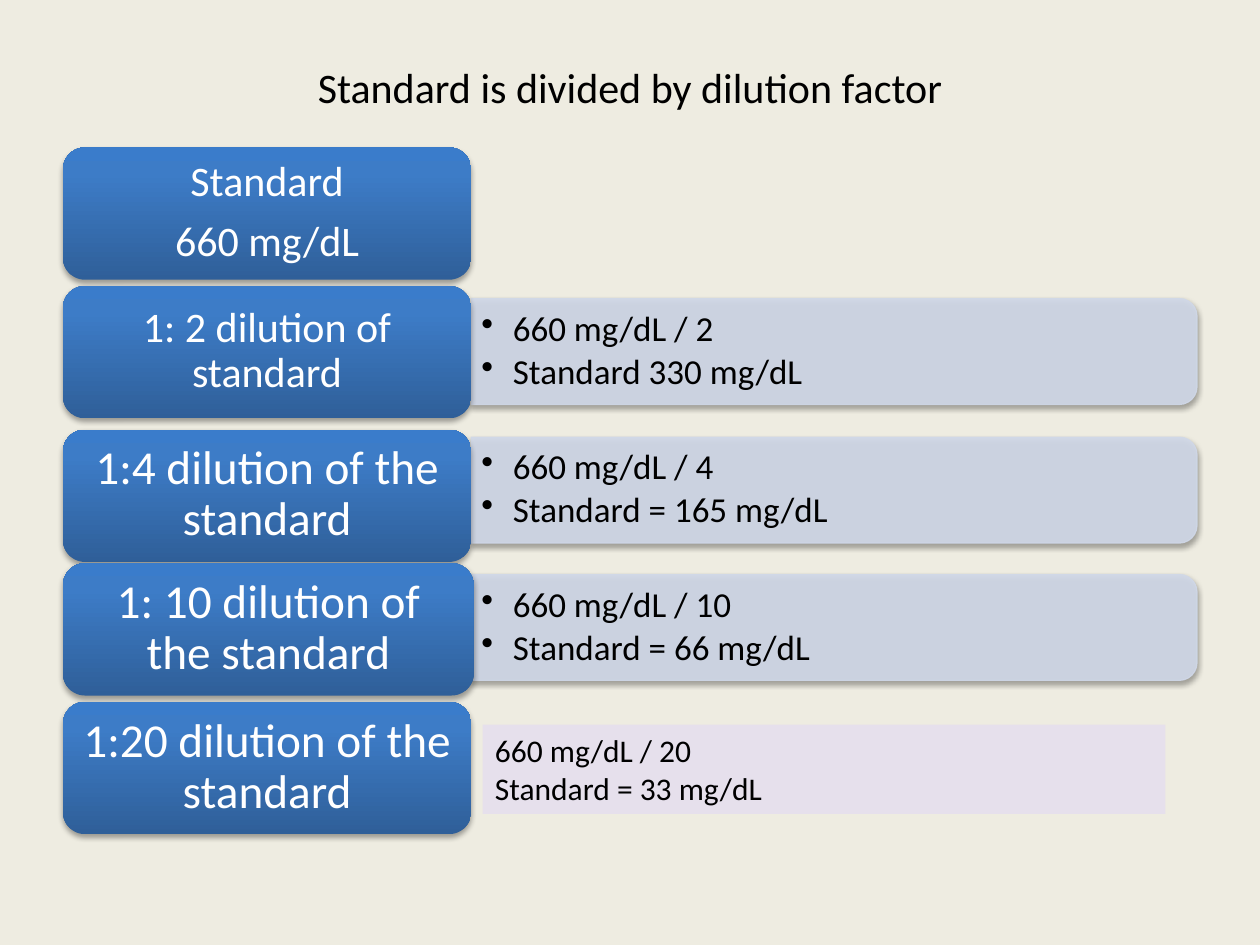
from dataclasses import dataclass

import lxml.etree
import pptx
import pptx.dml.color
import pptx.enum.shapes
import pptx.enum.text
import pptx.oxml
import pptx.oxml.ns
import pptx.util

Inches = pptx.util.Inches
Pt = pptx.util.Pt
qn = pptx.oxml.ns.qn
SHAPES = pptx.enum.shapes.MSO_SHAPE
ALIGN = pptx.enum.text.PP_ALIGN
MIDDLE = pptx.enum.text.MSO_ANCHOR.MIDDLE

COLORS = {
    "background": "EEECE1",
    "text": "000000",
    "label_text": "FFFFFF",
    "label_dark": "2F5F99",
    "label_mid": "3D7CC7",
    "label_light": "3A7CCB",
    "bar": "D0D8E8",
    "note": "E6E0EC",
    "shadow": "000000",
}
LABEL_GRADIENT = [(0, "label_dark"), (80, "label_mid"), (100, "label_light")]
LABEL_LEFT, LABEL_HEIGHT, LABEL_PADDING = 0.5, 1.05, 0.05
BAR_LEFT, BAR_LENGTH, BAR_THICKNESS = 3.74, 5.76, 0.84


@dataclass
class Label:
    top: float
    lines: list[str]
    size: int = 27
    width: float = 3.24


@dataclass
class Bar:
    middle: float
    lines: list[str]


LABELS = [
    Label(1.17, ["Standard", "660 mg/dL"], size=24),
    Label(2.27, ["1: 2 dilution of standard"], size=24),
    Label(3.41, ["1:4 dilution of the standard"]),
    Label(4.47, ["1: 10 dilution of the standard"], width=3.26),
    Label(5.57, ["1:20 dilution of the standard"]),
]
BARS = [
    Bar(2.79, ["660 mg/dL / 2", "Standard 330 mg/dL"]),
    Bar(3.89, ["660 mg/dL / 4", "Standard = 165 mg/dL"]),
    Bar(4.98, ["660 mg/dL / 10", "Standard = 66 mg/dL"]),
]


def color(name: str) -> pptx.dml.color.RGBColor:
    return pptx.dml.color.RGBColor.from_string(COLORS[name])


def apply_format(target, values: dict) -> None:
    for name, value in values.items():
        setattr(target, name, value)


def write_lines(frame, lines: list[str], size: int, color_name: str, paragraph_format: dict) -> None:
    for index, line in enumerate(lines):
        paragraph = frame.paragraphs[0] if index == 0 else frame.add_paragraph()
        apply_format(paragraph, paragraph_format)
        run = paragraph.add_run()
        run.text = line
        apply_format(run.font, {"name": "Calibri", "size": Pt(size)})
        run.font.color.rgb = color(color_name)


def add_text(slide, box: tuple, horizontal_inset: float, vertical_inset: float):
    frame = slide.shapes.add_textbox(*map(Inches, box)).text_frame
    apply_format(frame, {
        "word_wrap": True,
        "vertical_anchor": MIDDLE,
        "margin_left": Inches(horizontal_inset),
        "margin_right": Inches(horizontal_inset),
        "margin_top": Inches(vertical_inset),
        "margin_bottom": Inches(vertical_inset),
    })
    return frame


def add_color_element(parent, name: str, alpha: int = 100) -> None:
    element = lxml.etree.SubElement(parent, qn("a:srgbClr"), val=COLORS[name])
    if alpha < 100:
        lxml.etree.SubElement(element, qn("a:alpha"), val=str(alpha * 1000))


def add_shadow(shape) -> None:
    shape.shadow.inherit = False
    effects = shape._element.spPr.find(qn("a:effectLst"))
    shadow = lxml.etree.SubElement(
        effects, qn("a:outerShdw"), blurRad=str(Pt(3.1)), dist=str(Pt(1.8)),
        dir="5400000", rotWithShape="0")
    add_color_element(shadow, "shadow", 35)


def add_bar(slide, bar: Bar) -> None:
    shape = slide.shapes.add_shape(
        SHAPES.ROUND_2_SAME_RECTANGLE,
        Inches(BAR_LEFT + (BAR_LENGTH - BAR_THICKNESS) / 2), Inches(bar.middle - BAR_LENGTH / 2),
        Inches(BAR_THICKNESS), Inches(BAR_LENGTH))
    apply_format(shape, {"rotation": 90})
    shape.line.width = Pt(0.75)
    for fill in (shape.fill, shape.line.fill):
        fill.solid()
        fill.fore_color.rgb = color("bar")
    for element in shape._element.spPr.iter(qn("a:srgbClr")):
        lxml.etree.SubElement(element, qn("a:alpha"), val="90000")
    add_shadow(shape)

    frame = add_text(slide, (BAR_LEFT, bar.middle - 0.38, 5.72, 0.76), 0.08, 0.04)
    write_lines(frame, bar.lines, 20, "text",
                {"level": 1, "line_spacing": 0.9, "space_after": Pt(3), "space_before": Pt(0)})
    for paragraph in frame.paragraphs:
        properties = paragraph._p.get_or_add_pPr()
        properties.set("marL", str(Inches(0.25)))
        properties.set("indent", str(Inches(-0.25)))
        lxml.etree.SubElement(properties, qn("a:buChar"), char="•")


def add_label(slide, label: Label) -> None:
    shape = slide.shapes.add_shape(
        SHAPES.ROUNDED_RECTANGLE, Inches(LABEL_LEFT), Inches(label.top),
        Inches(label.width), Inches(LABEL_HEIGHT))
    shape.fill.gradient()
    shape.fill.gradient_angle = 90
    stops = shape._element.spPr.find(qn("a:gradFill")).find(qn("a:gsLst"))
    for stop in list(stops):
        stops.remove(stop)
    for position, name in LABEL_GRADIENT:
        stop = lxml.etree.SubElement(stops, qn("a:gs"), pos=str(position * 1000))
        add_color_element(stop, name)
    shape.line.fill.background()
    add_shadow(shape)

    insets = (0.11, 0.06) if label.size > 24 else (0.1, 0.05)
    box = (LABEL_LEFT + LABEL_PADDING, label.top + LABEL_PADDING,
           label.width - 2 * LABEL_PADDING, 0.94)
    write_lines(add_text(slide, box, *insets), label.lines, label.size, "label_text",
                {"alignment": ALIGN.CENTER, "line_spacing": 0.9,
                 "space_after": Pt(round(label.size * 0.35, 1))})


def add_title(slide) -> None:
    title = slide.shapes.title
    apply_format(title, {"left": Inches(0.5), "top": Inches(0.3),
                         "width": Inches(9), "height": Inches(0.78)})
    title.text_frame.vertical_anchor = MIDDLE
    write_lines(title.text_frame, ["Standard is divided by dilution factor"], 24, "text",
                {"alignment": ALIGN.CENTER})


def add_note(slide) -> None:
    note = slide.shapes.add_shape(
        SHAPES.RECTANGLE, Inches(3.83), Inches(5.75), Inches(5.42), Inches(0.71))
    note.shadow.inherit = False
    note.fill.solid()
    note.fill.fore_color.rgb = color("note")
    note.line.fill.background()
    apply_format(note.text_frame, {
        "word_wrap": True,
        "vertical_anchor": pptx.enum.text.MSO_ANCHOR.TOP,
        "auto_size": pptx.enum.text.MSO_AUTO_SIZE.SHAPE_TO_FIT_TEXT,
    })
    write_lines(note.text_frame, ["660 mg/dL / 20", "Standard = 33 mg/dL"], 18, "text",
                {"alignment": ALIGN.LEFT})


def main() -> None:
    presentation = pptx.Presentation()
    apply_format(presentation, {"slide_width": Inches(10), "slide_height": Inches(7.5)})
    slide = presentation.slides.add_slide(presentation.slide_layouts.get_by_name("Title Only"))
    slide.background.fill.solid()
    slide.background.fill.fore_color.rgb = color("background")
    add_title(slide)
    for bar in BARS:
        add_bar(slide, bar)
    for label in LABELS:
        add_label(slide, label)
    add_note(slide)
    presentation.save("out.pptx")


if __name__ == "__main__":
    main()
